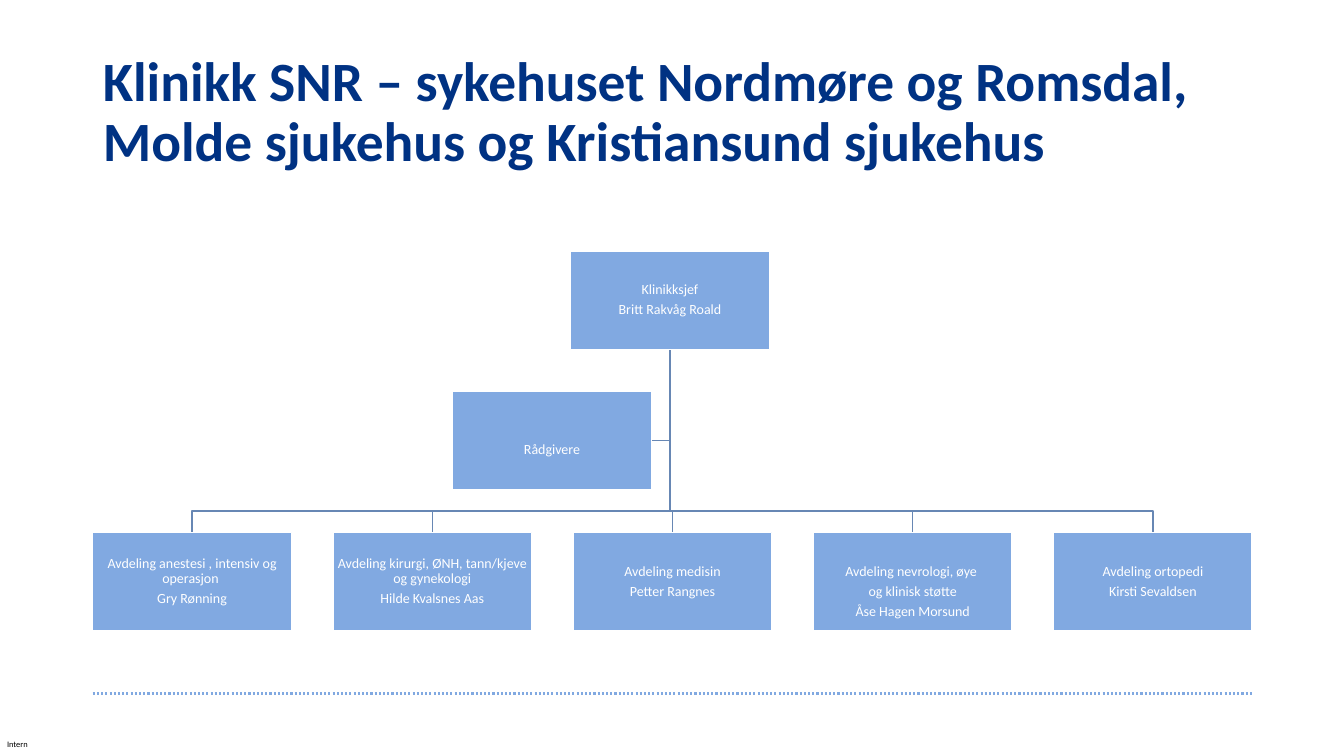
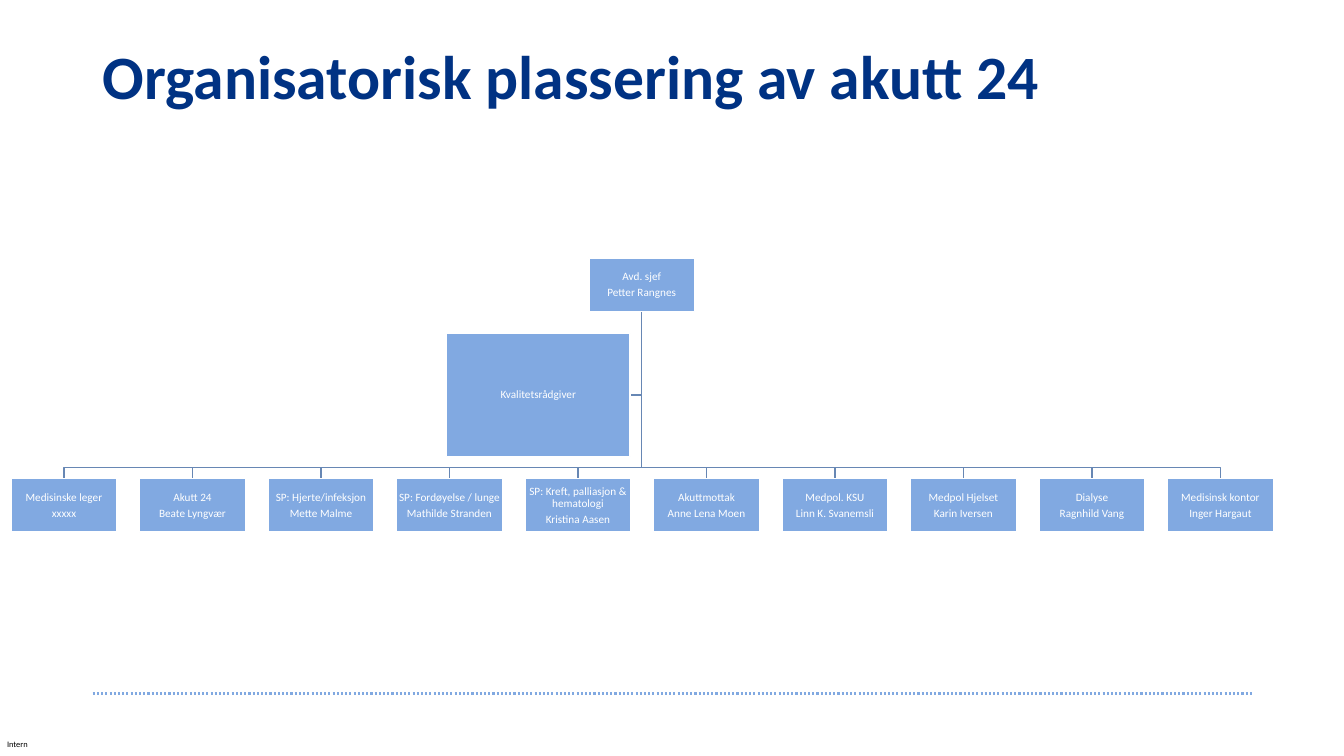
from lxml import etree
from pptx import Presentation
from pptx.dml.color import RGBColor
from pptx.enum.dml import MSO_LINE
from pptx.enum.shapes import MSO_CONNECTOR, MSO_SHAPE
from pptx.enum.text import MSO_ANCHOR, MSO_AUTO_SIZE, PP_ALIGN
from pptx.oxml.ns import qn
from pptx.util import Inches, Pt

NAVY = RGBColor(0x00, 0x32, 0x83)
BOX_BLUE = RGBColor(0x81, 0xA9, 0xE1)
LINE_BLUE = RGBColor(0x67, 0x87, 0xB4)
WHITE = RGBColor(0xFF, 0xFF, 0xFF)
BLACK = RGBColor(0x00, 0x00, 0x00)
FONT = "Calibri"
MARGIN_LEFT, MARGIN_RIGHT = 0.92, 12.42

# Content: boxes are (left, top, width, height) in inches;
# a unit is its lines of text, "lowered" shifts the text down in the box
CHARTS = [
    {
        "title": ["Klinikk SNR – sykehuset Nordmøre og Romsdal, ",
                  "Molde sjukehus og Kristiansund sjukehus"],
        "title_size": 39.6, "title_top": 0.4, "title_height": 1.45,
        "text_size": 10,
        "chief": ["Klinikksjef", "Britt Rakvåg Roald"],
        "chief_box": (5.66, 2.49, 1.97, 0.98),
        "adviser": ["Rådgivere"],
        "adviser_box": (4.49, 3.88, 1.97, 0.98),
        "adviser_lowered": 0.09,
        "units": [
            ["Avdeling anestesi , intensiv og operasjon ", "Gry Rønning"],
            ["Avdeling kirurgi, ØNH, tann/kjeve og gynekologi", "Hilde Kvalsnes Aas"],
            ["Avdeling medisin", "Petter Rangnes"],
            ["Avdeling nevrologi, øye ", "og klinisk støtte", "Åse Hagen Morsund"],
            ["Avdeling ortopedi", "Kirsti Sevaldsen"],
        ],
        "lowered_units": {3: 0.1},
        "units_span": (MARGIN_LEFT, MARGIN_RIGHT),
        "units_top": 5.28, "drop": 0.21,
    },
    {
        "title": ["Organisatorisk plassering av akutt 24"],
        "title_size": 44, "title_top": 0.33, "title_height": 0.91,
        "text_size": 8,
        "chief": ["Avd. sjef", "Petter Rangnes"],
        "chief_box": (5.84, 2.56, 1.05, 0.53),
        "adviser": ["Kvalitetsrådgiver"],
        "adviser_box": (4.43, 3.31, 1.82, 1.22),
        "adviser_lowered": 0,
        "units": [
            ["Medisinske leger", "xxxxx"],
            ["Akutt 24", "Beate Lyngvær"],
            ["SP: Hjerte/infeksjon", "Mette Malme"],
            ["SP: Fordøyelse / lunge", "Mathilde Stranden"],
            ["SP: Kreft, palliasjon & hematologi", "Kristina Aasen"],
            ["Akuttmottak", "Anne Lena Moen"],
            ["Medpol. KSU", "Linn K. Svanemsli"],
            ["Medpol Hjelset", "Karin Iversen"],
            ["Dialyse", "Ragnhild Vang"],
            ["Medisinsk kontor", "Inger Hargaut"],
        ],
        "lowered_units": {},
        "units_span": (0.11, 12.63),
        "units_top": 4.75, "drop": 0.11,
    },
]


def add_run(paragraph, text, size, color, bold=False):
    run = paragraph.add_run()
    run.text = text
    run.font.name, run.font.size, run.font.bold = FONT, Pt(size), bold
    run.font.color.rgb = color


def add_title(slide, chart):
    title = slide.shapes.title
    title.left, title.width = Inches(MARGIN_LEFT), Inches(MARGIN_RIGHT - MARGIN_LEFT)
    title.top, title.height = Inches(chart["title_top"]), Inches(chart["title_height"])
    frame = title.text_frame
    frame.auto_size = MSO_AUTO_SIZE.NONE
    frame.vertical_anchor = MSO_ANCHOR.MIDDLE
    paragraph = frame.paragraphs[0]
    paragraph.alignment, paragraph.line_spacing = PP_ALIGN.LEFT, 0.9
    for index, text in enumerate(chart["title"]):
        if index:
            paragraph.add_line_break()
        add_run(paragraph, text, chart["title_size"], NAVY, bold=True)


def add_footer(slide):
    rule = slide.shapes.add_connector(MSO_CONNECTOR.STRAIGHT, Inches(MARGIN_LEFT), Inches(6.88),
                                      Inches(MARGIN_RIGHT), Inches(6.88))
    rule.line.color.rgb = BOX_BLUE
    rule.line.width = Pt(1.5)
    rule.line.dash_style = MSO_LINE.ROUND_DOT
    etree.SubElement(rule.element.spPr, qn("a:effectLst"))
    label = slide.shapes.add_textbox(Inches(0.07), Inches(7.33), Inches(0.23), Inches(0.1))
    frame = label.text_frame
    frame.margin_left = frame.margin_right = frame.margin_top = frame.margin_bottom = 0
    add_run(frame.paragraphs[0], "Intern", 6, BLACK)


def add_branch(slide, *points):
    """Draw an open, angled line through the points."""
    start, *others = [(Inches(x), Inches(y)) for x, y in points]
    builder = slide.shapes.build_freeform(*start)
    builder.add_line_segments(others, close=False)
    branch = builder.convert_to_shape()
    branch.shadow.inherit = False
    branch.fill.background()
    branch.line.color.rgb = LINE_BLUE
    branch.line.width = Pt(1)


def add_box(slide, box, lines, size, lowered=0):
    shape = slide.shapes.add_shape(MSO_SHAPE.RECTANGLE, *[Inches(value) for value in box])
    shape.shadow.inherit = False
    shape.fill.solid()
    shape.fill.fore_color.rgb = BOX_BLUE
    shape.line.color.rgb = WHITE
    shape.line.width = Pt(1)
    frame = shape.text_frame
    frame.word_wrap = True
    frame.vertical_anchor = MSO_ANCHOR.MIDDLE
    frame.margin_left = frame.margin_right = frame.margin_bottom = Inches(0.01)
    frame.margin_top = Inches(0.01 + 2 * lowered)
    for index, text in enumerate(lines):
        paragraph = frame.add_paragraph() if index else frame.paragraphs[0]
        paragraph.alignment, paragraph.line_spacing = PP_ALIGN.CENTER, 0.9
        paragraph.space_after = Pt(0.35 * size)
        add_run(paragraph, text, size, WHITE)


def add_organisation(slide, chart):
    size, units_top = chart["text_size"], chart["units_top"]
    left, top, width, height = chart["chief_box"]
    side_left, side_top, side_width, side_height = chart["adviser_box"]
    first, last = chart["units_span"]
    step = (last - first - width) / (len(chart["units"]) - 1)
    unit_lefts = [first + index * step for index in range(len(chart["units"]))]

    # Branches from the chief, behind the boxes
    trunk_x, trunk_y = left + width / 2, top + height
    side_y, bus_y = side_top + side_height / 2, units_top - chart["drop"]
    add_branch(slide, (trunk_x, trunk_y), (trunk_x, side_y), (side_left + side_width, side_y))
    for unit_left in reversed(unit_lefts):
        center = unit_left + width / 2
        add_branch(slide, (trunk_x, trunk_y), (trunk_x, bus_y),
                   (center, bus_y), (center, units_top))

    # Chief, evenly spread units and adviser
    add_box(slide, chart["chief_box"], chart["chief"], size)
    for index, (unit_left, lines) in enumerate(zip(unit_lefts, chart["units"])):
        add_box(slide, (unit_left, units_top, width, height), lines, size,
                chart["lowered_units"].get(index, 0))
    add_box(slide, chart["adviser_box"], chart["adviser"], size, chart["adviser_lowered"])


def main():
    presentation = Presentation()
    presentation.slide_width, presentation.slide_height = Inches(13.33), Inches(7.5)
    title_only = presentation.slide_layouts[5]
    for chart in CHARTS:
        slide = presentation.slides.add_slide(title_only)
        add_footer(slide)
        add_title(slide, chart)
        add_organisation(slide, chart)
    presentation.save("out.pptx")


if __name__ == "__main__":
    main()
